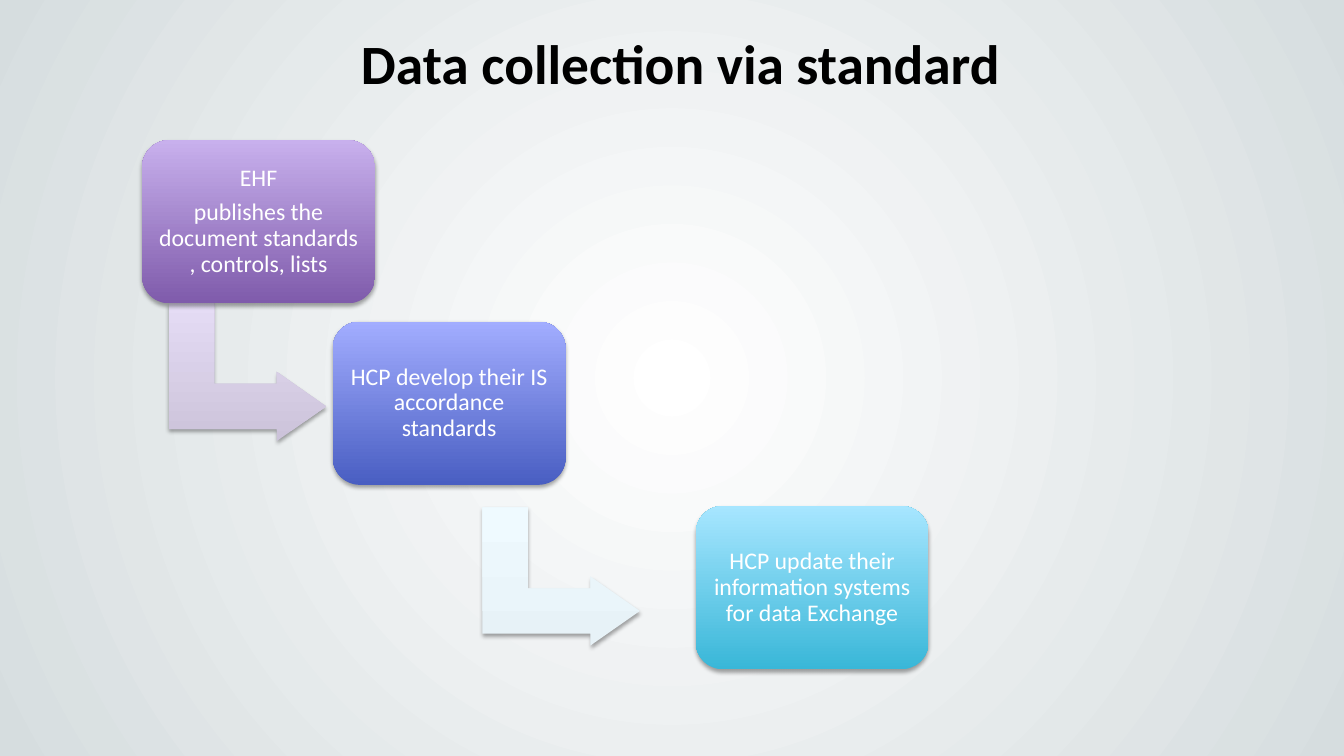
from dataclasses import dataclass

from lxml import etree
from pptx import Presentation
from pptx.dml.color import RGBColor
from pptx.enum.shapes import MSO_SHAPE
from pptx.enum.text import MSO_ANCHOR, PP_ALIGN
from pptx.oxml.ns import qn
from pptx.util import Inches, Pt

ROUND_RECT = MSO_SHAPE.ROUNDED_RECTANGLE
BENT_ARROW = MSO_SHAPE.BENT_UP_ARROW
MIDDLE = MSO_ANCHOR.MIDDLE
CENTER = PP_ALIGN.CENTER
A_NS = "http://schemas.openxmlformats.org/drawingml/2006/main"


@dataclass(frozen=True)
class Theme:
    font: str = "Calibri"
    title_size: float = 39.6
    body_size: float = 17
    title: str = "000000"
    body: str = "FFFFFF"
    background: tuple = ("FFFFFF", "D6DDDF")
    purple: tuple = ("7F5BAB", "C8B0ED")
    blue: tuple = ("495EC2", "A2ADFF")
    cyan: tuple = ("39B7D8", "A7E6FF")
    pale_purple: tuple = ("CCC3DA", "E5DCF5")
    pale_cyan: tuple = ("E7F2F7", "EFFAFF")


THEME = Theme()
BOX_W, BOX_H = 2.31, 1.62
ARROW_W, ARROW_H = 1.37, 1.56
UPWARD = '<a:lin ang="16200000" scaled="0"/>'
RADIAL = ('<a:path path="circle"><a:fillToRect l="50000" t="50000" '
          'r="50000" b="50000"/></a:path>')

STEPS = [
    (1.41, 1.39, THEME.purple,
     ["EHF", "publishes the document standards , controls, lists"]),
    (3.3, 3.19, THEME.blue, ["HCP develop their IS accordance standards"]),
    (6.9, 5.02, THEME.cyan,
     ["HCP update their information systems for data Exchange"]),
]
ARROWS = [(1.77, 2.91, THEME.pale_purple), (4.88, 4.94, THEME.pale_cyan)]


def gradient(colors, direction):
    stops = "".join(
        f'<a:gs pos="{pos}"><a:srgbClr val="{color}"/></a:gs>'
        for pos, color in zip((0, 100000), colors))
    return etree.fromstring(
        f'<a:gradFill xmlns:a="{A_NS}" rotWithShape="0">'
        f'<a:gsLst>{stops}</a:gsLst>{direction}</a:gradFill>')


def replace_solid(parent, colors, direction):
    solid = parent.find(qn("a:solidFill"))
    parent.replace(solid, gradient(colors, direction))


def add_shadow(sp):
    sp.shadow.inherit = False
    effects = sp.element.spPr.find(qn("a:effectLst"))
    effects.append(etree.fromstring(
        f'<a:outerShdw xmlns:a="{A_NS}" blurRad="{Pt(3.1)}" '
        f'dist="{Pt(1.8)}" dir="5400000" rotWithShape="0">'
        '<a:srgbClr val="000000"><a:alpha val="35000"/></a:srgbClr>'
        '</a:outerShdw>'))


def write_text(tf, paragraphs, size, color, bold=False, inset=0.07,
               line_spacing=1.0, space_after=0):
    tf.word_wrap = True
    tf.vertical_anchor = MIDDLE
    tf.margin_left = tf.margin_right = Inches(inset)
    tf.margin_top = tf.margin_bottom = Inches(inset)
    for i, text in enumerate(paragraphs):
        p = tf.add_paragraph() if i else tf.paragraphs[0]
        p.alignment = CENTER
        p.line_spacing = line_spacing
        p.space_after = Pt(space_after)
        r = p.add_run()
        r.text = text
        r.font.name = THEME.font
        r.font.size = Pt(size)
        r.font.bold = bold
        r.font.color.rgb = RGBColor.from_string(color)


def add_gradient_shape(slide, kind, x, y, w, h, colors):
    sp = slide.shapes.add_shape(kind, Inches(x), Inches(y), Inches(w), Inches(h))
    sp.fill.solid()
    replace_solid(sp.element.spPr, colors, UPWARD)
    sp.line.fill.background()
    add_shadow(sp)
    return sp


def add_background(slide):
    slide.background.fill.solid()
    bg = slide.element.find(f".//{qn('p:bgPr')}")
    replace_solid(bg, THEME.background, RADIAL)


def add_title(slide, x, y, w, h, text):
    sp = slide.shapes.add_textbox(Inches(x), Inches(y), Inches(w), Inches(h))
    write_text(sp.text_frame, [text], THEME.title_size, THEME.title, bold=True)


def add_arrow(slide, x, y, colors):
    sp = add_gradient_shape(slide, BENT_ARROW, x, y, ARROW_W, ARROW_H, colors)
    sp.rotation = 90
    for i, value in enumerate((0.328, 0.25, 0.358)):
        sp.adjustments[i] = value


def add_step(slide, x, y, colors, paragraphs):
    sp = add_gradient_shape(slide, ROUND_RECT, x, y, BOX_W, BOX_H, colors)
    sp.adjustments[0] = 0.167
    write_text(sp.text_frame, paragraphs, THEME.body_size, THEME.body,
               line_spacing=0.9, space_after=6)


def main():
    prs = Presentation()
    prs.slide_width, prs.slide_height = Inches(13.33), Inches(7.5)
    slide = prs.slides.add_slide(prs.slide_layouts[6])
    add_background(slide)
    add_title(slide, 0.75, 0.23, 12, 0.77, "Data collection via standard")
    for arrow in ARROWS:
        add_arrow(slide, *arrow)
    for step in STEPS:
        add_step(slide, *step)
    prs.save("out.pptx")


if __name__ == "__main__":
    main()
